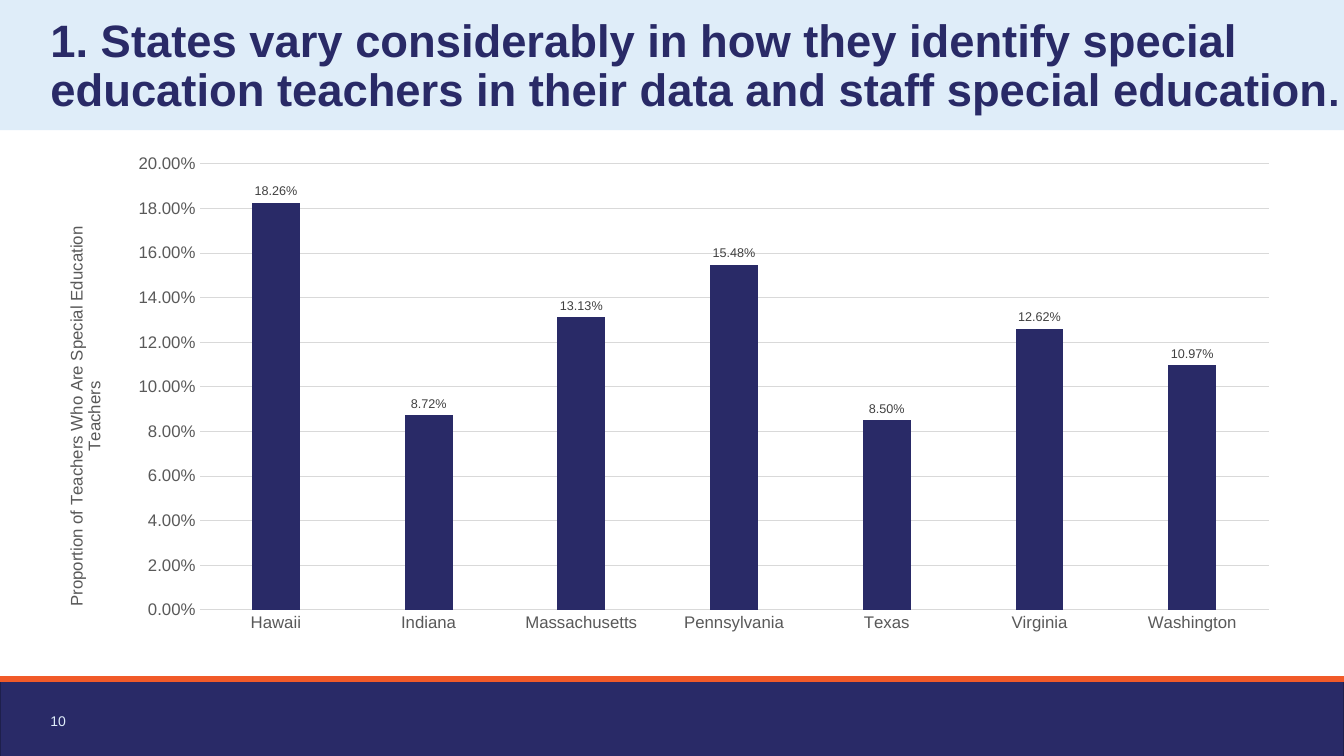
from lxml.etree import SubElement as Sub
from pptx import Presentation
from pptx.chart.data import CategoryChartData as Data
from pptx.dml.color import RGBColor as RGB
from pptx.enum.chart import XL_CHART_TYPE as Kind, XL_LABEL_POSITION as Spot
from pptx.enum.chart import XL_TICK_MARK as Tick
from pptx.enum.shapes import MSO_CONNECTOR as Link, MSO_SHAPE as Form
from pptx.enum.text import MSO_ANCHOR as Anchor
from pptx.oxml import parse_xml
from pptx.oxml.ns import nsdecls, qn
from pptx.util import Pt

HUES = {"navy": "292A67", "edge": "1E1F4C", "pale": "DFEDF9", "orange": "F15A29",
        "grid": "D9D9D9", "gray": "595959", "dark": "404040"}
FACE = "Arial"
WIDE, HIGH = 960, 540
RATES = {"Hawaii": 0.1826, "Indiana": 0.0872, "Massachusetts": 0.1313,
         "Pennsylvania": 0.1548, "Texas": 0.085, "Virginia": 0.1262,
         "Washington": 0.1097}


def hue(name):
    return RGB.from_string(HUES[name])


def style(font, size, color, bold=False):
    font.name, font.size, font.bold = FACE, Pt(size), bold
    font.color.rgb = hue(color)


def text(slide, box, runs, color, bold=False, wrap=True, pad=0, lead=1, after=0):
    """Add a bottom-anchored text box; runs are (words, size) pairs."""
    frame = slide.shapes.add_textbox(*map(Pt, box)).text_frame
    frame.word_wrap = wrap
    frame.vertical_anchor = Anchor.BOTTOM
    frame.margin_left = frame.margin_right = 0
    frame.margin_top = frame.margin_bottom = Pt(pad)
    para = frame.paragraphs[0]
    para.line_spacing, para.space_after = lead, Pt(after)
    for words, size in runs:
        run = para.add_run()
        run.text = words
        style(run.font, size, color, bold)


def band(slide, box, fill, edge=None):
    shape = slide.shapes.add_shape(Form.RECTANGLE, *map(Pt, box))
    shape.shadow.inherit = False
    shape.fill.solid()
    shape.fill.fore_color.rgb = hue(fill)
    if edge:
        shape.line.color.rgb, shape.line.width = hue(edge), Pt(1)
    else:
        shape.line.fill.background()


def header(slide, box):
    x, y, w, h = box
    band(slide, box, "pale")
    text(slide, (x + 36, y + 7.2, w - 36, h - 17.3),
         [("1. States vary considerably in how they identify special education "
           "teachers in their data and staff special education", 32.4), (".", 28.8)],
         "navy", bold=True, lead=0.9)


def footer(slide, box):
    x, y, w, h = box
    band(slide, box, "navy", "edge")
    rule = slide.shapes.add_connector(Link.STRAIGHT, Pt(x), Pt(y), Pt(x + w), Pt(y))
    rule.line.color.rgb, rule.line.width = hue("orange"), Pt(4.5)
    Sub(rule._element.spPr, qn("a:effectLst"))
    text(slide, (x + 36, y + 20.2, 19.4, 19.4), [("10", 10)], "pale",
         wrap=False, pad=3.6, after=6)


def layout(**spots):
    """Build a manual chart layout from fractions of the chart's size."""
    inner = '<c:layoutTarget val="inner"/>' if "w" in spots else ""
    modes = "".join(f'<c:{k}Mode val="edge"/>' for k in "xy")
    sizes = "".join(f'<c:{k} val="{v}"/>' for k, v in spots.items())
    return parse_xml(f'<c:layout {nsdecls("c")}><c:manualLayout>{inner}{modes}{sizes}'
                     '</c:manualLayout></c:layout>')


def place(part, spot, at):
    for old in part.findall(qn("c:layout")):
        part.remove(old)
    part.insert(at, spot)


def bars(slide, box):
    data = Data(number_format="0.00%")
    data.categories = list(RATES)
    data.add_series("Series 1", list(RATES.values()))
    chart = slide.shapes.add_chart(Kind.COLUMN_CLUSTERED, *map(Pt, box), data).chart
    chart.has_legend = chart.has_title = False
    chart.font.name, chart.font.size = FACE, Pt(10)

    # Columns and their values
    plot = chart.plots[0]
    plot.vary_by_categories = False
    plot.gap_width, plot.overlap = 219, -27
    fill = plot.series[0].format.fill
    fill.solid()
    fill.fore_color.rgb = hue("navy")
    plot.has_data_labels = True
    tags = plot.data_labels
    tags.show_value, tags.position = True, Spot.OUTSIDE_END
    tags.number_format, tags.number_format_is_linked = "0.00%", False
    style(tags.font, 9, "dark")

    # Axes
    cat, val = chart.category_axis, chart.value_axis
    for axis in (cat, val):
        axis.major_tick_mark = axis.minor_tick_mark = Tick.NONE
        style(axis.tick_labels.font, 12, "gray")
    val.minimum_scale, val.maximum_scale, val.major_unit = 0, 0.2, 0.02
    val.tick_labels.number_format = "0.00%"
    val.tick_labels.number_format_is_linked = False
    val.format.line.fill.background()
    for line in (cat.format.line, val.major_gridlines.format.line):
        line.color.rgb, line.width = hue("grid"), Pt(0.75)

    # Axis title
    title = val.axis_title
    frame = title.text_frame
    frame.text = "Proportion of Teachers Who Are Special Education Teachers"
    style(frame.paragraphs[0].runs[0].font, 12, "gray")
    turn = frame._txBody.bodyPr
    turn.set("rot", "-5400000")
    turn.set("vert", "horz")
    place(title._element, layout(x=0.01, y=0.16), 1)
    place(plot._element.getparent(), layout(x=0.12, y=0.04, w=0.86, h=0.9), 0)


def main():
    deck = Presentation()
    deck.slide_width, deck.slide_height = Pt(WIDE), Pt(HIGH)
    slide = deck.slides.add_slide(deck.slide_layouts[6])
    footer(slide, (0, 485, WIDE, 61))
    header(slide, (0, 0, WIDE, 93))
    bars(slide, (36, 103, WIDE - 72, 354))
    deck.save("out.pptx")


if __name__ == "__main__":
    main()
